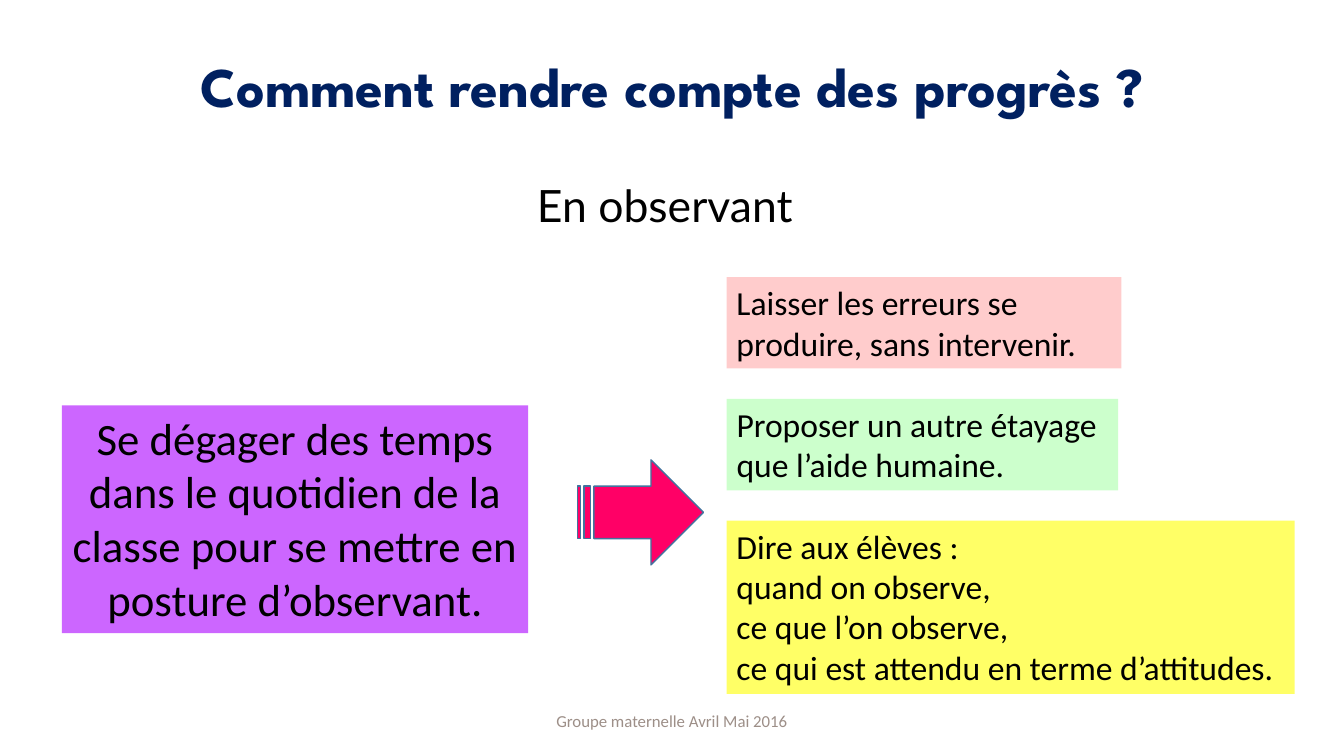
from dataclasses import dataclass

from pptx import Presentation
from pptx.dml.color import RGBColor
from pptx.enum.shapes import MSO_SHAPE
from pptx.enum.text import MSO_ANCHOR, MSO_AUTO_SIZE, PP_ALIGN
from pptx.slide import Slide
from pptx.util import Emu, Pt

PX = 9525
WIDE, HIGH = 1280, 720
LIST_X = 692

COLORS = {
    "navy": "002060",
    "black": "000000",
    "grey": "9D8F88",
    "violet": "CC66FF",
    "rose": "FFCCCC",
    "green": "CCFFCC",
    "yellow": "FFFF66",
    "pink": "FF0066",
    "steel": "43739E",
}


@dataclass(frozen=True)
class Box:
    left: int
    top: int
    width: int
    height: int


@dataclass(frozen=True)
class Label:
    box: Box
    lines: tuple[str, ...]
    size: float
    font: str = "Calibri"
    color: str = "black"
    fill: str | None = None
    bold: bool = False
    center: bool = False
    middle: bool = False
    pitch: float = 1.0
    before: int = 0


LABELS = (
    Label(Box(88, 38, 1104, 95), ("Comment rendre compte des progrès ?",), 40,
          font="League Spartan", color="navy", bold=True,
          center=True, middle=True, pitch=0.9),
    Label(Box(502, 179, 335, 63), ("En observant",), 31.8,
          font="Lato", pitch=0.7, before=10),
    Label(Box(424, 667, 432, 38), ("Groupe maternelle Avril Mai 2016",), 12,
          color="grey", center=True, middle=True),
    Label(Box(59, 386, 444, 217),
          ("Se dégager des temps dans le quotidien de la classe "
           "pour se mettre en posture d’observant.",), 32,
          fill="violet", center=True),
    Label(Box(LIST_X, 264, 376, 87),
          ("Laisser les erreurs se produire, sans intervenir.",), 24,
          fill="rose"),
    Label(Box(LIST_X, 380, 373, 87),
          ("Proposer un autre étayage que l’aide humaine.",), 24,
          fill="green"),
    Label(Box(LIST_X, 496, 541, 165),
          ("Dire aux élèves :", "quand on observe,", "ce que l’on observe,",
           "ce qui est attendu en terme d’attitudes."), 24,
          fill="yellow"),
)
ARROW = Box(550, 438, 120, 100)


def place(box: Box) -> tuple[Emu, Emu, Emu, Emu]:
    """Give the box's left, top, width and height in EMU."""
    return (Emu(box.left * PX), Emu(box.top * PX),
            Emu(box.width * PX), Emu(box.height * PX))


def color(name: str) -> RGBColor:
    return RGBColor.from_string(COLORS[name])


def add_label(slide: Slide, label: Label) -> None:
    shape = slide.shapes.add_textbox(*place(label.box))
    frame = shape.text_frame
    frame.word_wrap = True
    frame.vertical_anchor = MSO_ANCHOR.MIDDLE if label.middle else MSO_ANCHOR.TOP
    if label.fill:
        shape.fill.solid()
        shape.fill.fore_color.rgb = color(label.fill)
        frame.auto_size = MSO_AUTO_SIZE.SHAPE_TO_FIT_TEXT
    frame.text = "\n".join(label.lines)
    for para in frame.paragraphs:
        para.alignment = PP_ALIGN.CENTER if label.center else PP_ALIGN.LEFT
        para.line_spacing = label.pitch
        para.space_before = Pt(label.before)
        para.font.name = label.font
        para.font.size = Pt(label.size)
        para.font.bold = label.bold
        para.font.color.rgb = color(label.color)


def add_arrow(slide: Slide, box: Box) -> None:
    arrow = slide.shapes.add_shape(MSO_SHAPE.STRIPED_RIGHT_ARROW, *place(box))
    arrow.shadow.inherit = False
    arrow.fill.solid()
    arrow.fill.fore_color.rgb = color("pink")
    arrow.line.color.rgb = color("steel")
    arrow.line.width = Pt(1)


def main() -> None:
    deck = Presentation()
    deck.slide_width, deck.slide_height = Emu(WIDE * PX), Emu(HIGH * PX)
    slide = deck.slides.add_slide(deck.slide_layouts[6])
    for label in LABELS:
        add_label(slide, label)
    add_arrow(slide, ARROW)
    deck.save("out.pptx")


if __name__ == "__main__":
    main()
